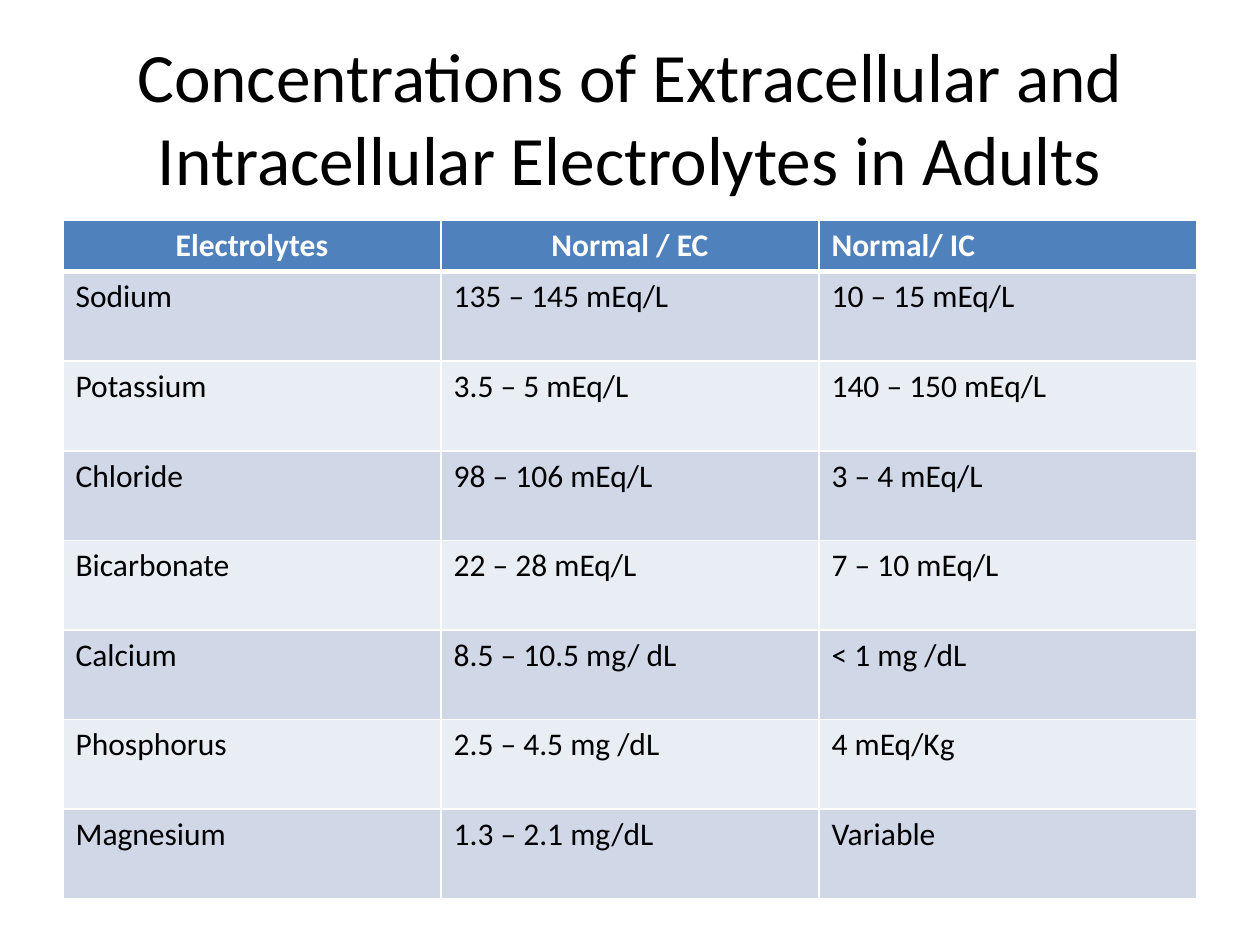
from dataclasses import dataclass

import pptx
import pptx.dml.color
import pptx.enum.text
import pptx.oxml
import pptx.oxml.ns
import pptx.util

Pt = pptx.util.Pt
Align = pptx.enum.text.PP_ALIGN


@dataclass(frozen=True)
class Theme:
    font: str = "Calibri"
    title_size: float = 39.6
    table_size: float = 18
    text: str = "000000"
    header_text: str = "FFFFFF"
    header_fill: str = "4F81BD"
    bands: tuple = ("D0D8E8", "E9EDF4")
    border: str = "FFFFFF"
    border_width: float = 1
    header_rule_width: float = 3


HEADINGS = ("Electrolytes", "Normal / EC", "Normal/ IC")
HEADING_ALIGNMENTS = (Align.CENTER, Align.CENTER, Align.LEFT)
CONCENTRATIONS = (
    ("Sodium", "135 – 145 mEq/L", "10 – 15 mEq/L"),
    ("Potassium", "3.5 – 5 mEq/L", "140 – 150 mEq/L"),
    ("Chloride", "98 – 106 mEq/L", "3 – 4 mEq/L"),
    ("Bicarbonate", "22 – 28 mEq/L", "7 – 10 mEq/L"),
    ("Calcium", "8.5 – 10.5 mg/ dL", "< 1 mg /dL"),
    ("Phosphorus", "2.5 – 4.5 mg /dL", "4 mEq/Kg"),
    ("Magnesium", "1.3 – 2.1 mg/dL", "Variable"),
)


class SlideBuilder:
    def __init__(self, slide, theme):
        self.slide = slide
        self.theme = theme

    def format_paragraph(self, para, size, color, bold=False, align=Align.LEFT):
        para.alignment = align
        para.font.name = self.theme.font
        para.font.size = Pt(size)
        para.font.bold = bold
        para.font.color.rgb = pptx.dml.color.RGBColor.from_string(color)

    def title(self, text, left, top, width, height):
        title = self.slide.shapes.title
        title.left, title.top = Pt(left), Pt(top)
        title.width, title.height = Pt(width), Pt(height)
        frame = title.text_frame
        frame.text = text
        frame.word_wrap = True
        frame.auto_size = pptx.enum.text.MSO_AUTO_SIZE.NONE
        frame.vertical_anchor = pptx.enum.text.MSO_ANCHOR.MIDDLE
        self.format_paragraph(frame.paragraphs[0], self.theme.title_size,
                              self.theme.text, align=Align.CENTER)

    def borders(self, cell, bottom_width):
        """Line all four sides; the schema wants the lines ahead of the fill."""
        widths = dict.fromkeys(("lnL", "lnR", "lnT"), self.theme.border_width)
        widths["lnB"] = bottom_width
        properties = cell._tc.get_or_add_tcPr()
        for position, (side, width) in enumerate(widths.items()):
            properties.insert(position, pptx.oxml.parse_xml(
                f'<a:{side} {pptx.oxml.ns.nsdecls("a")} w="{Pt(width)}">'
                f'<a:solidFill><a:srgbClr val="{self.theme.border}"/></a:solidFill>'
                f'</a:{side}>'))

    def cell(self, cell, text, fill, color, bold=False, align=Align.LEFT,
             bottom_width=None):
        cell.text = text
        cell.fill.solid()
        cell.fill.fore_color.rgb = pptx.dml.color.RGBColor.from_string(fill)
        self.format_paragraph(cell.text_frame.paragraphs[0],
                              self.theme.table_size, color, bold, align)
        self.borders(cell, bottom_width or self.theme.border_width)

    def table(self, headings, alignments, records, left, top, width,
              header_height, row_height):
        theme = self.theme
        height = header_height + row_height * len(records)
        table = self.slide.shapes.add_table(
            len(records) + 1, len(headings),
            Pt(left), Pt(top), Pt(width), Pt(height)).table
        for row in table.rows:
            row.height = Pt(row_height)
        table.rows[0].height = Pt(header_height)
        for column, (heading, align) in enumerate(zip(headings, alignments)):
            self.cell(table.cell(0, column), heading, theme.header_fill,
                      theme.header_text, True, align, theme.header_rule_width)
        for index, record in enumerate(records):
            fill = theme.bands[index % len(theme.bands)]
            for column, text in enumerate(record):
                self.cell(table.cell(index + 1, column), text, fill, theme.text)


def main():
    deck = pptx.Presentation()
    deck.slide_width, deck.slide_height = Pt(720), Pt(540)
    title_only = deck.slide_layouts.get_by_name("Title Only")
    builder = SlideBuilder(deck.slides.add_slide(title_only), Theme())
    builder.title(
        "Concentrations of Extracellular and Intracellular Electrolytes in Adults",
        left=36, top=21.6, width=648, height=90)
    builder.table(HEADINGS, HEADING_ALIGNMENTS, CONCENTRATIONS,
                  left=36, top=126, width=648, header_height=29.2, row_height=51.2)
    deck.save("out.pptx")


if __name__ == "__main__":
    main()
